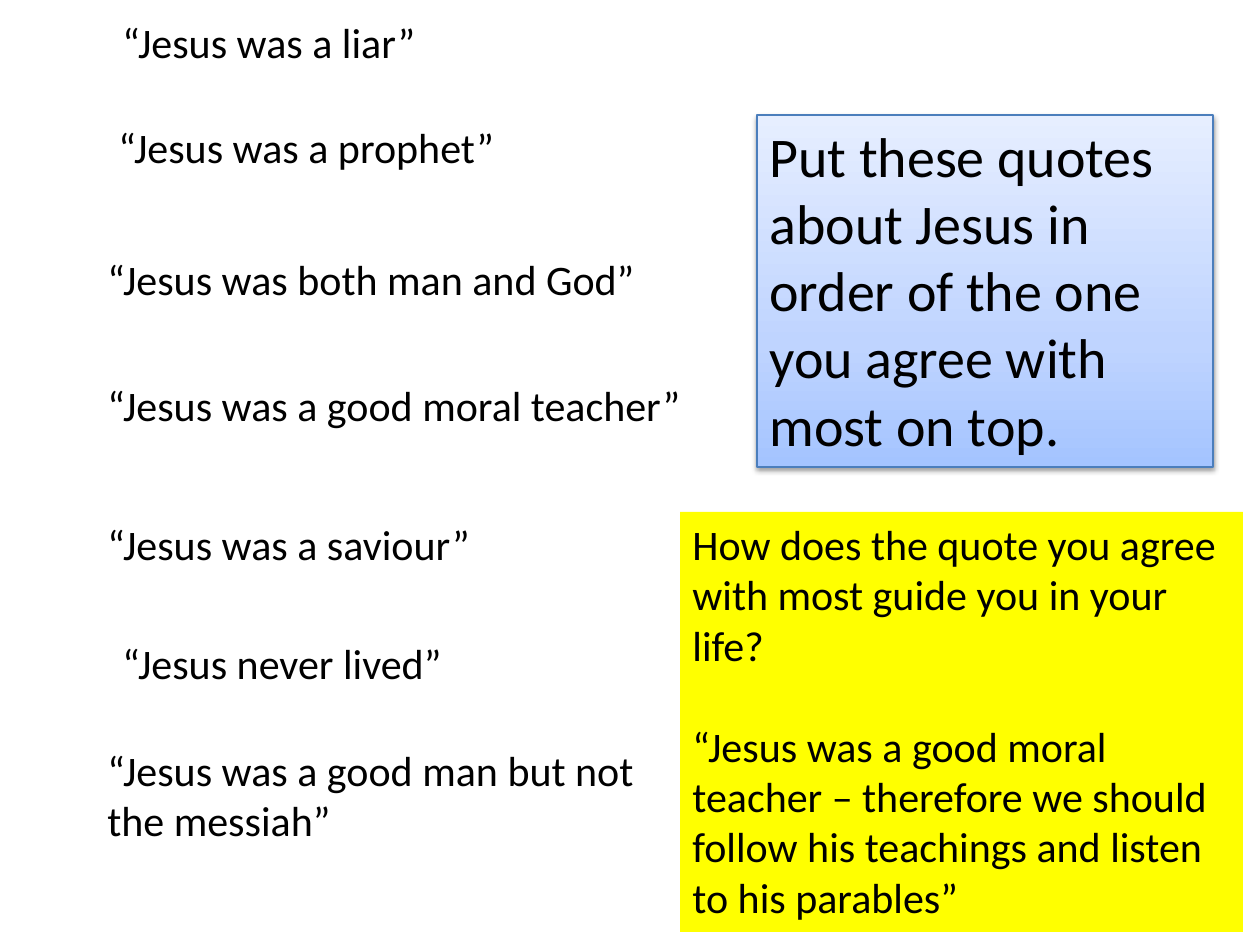
from copy import deepcopy

from lxml.etree import SubElement
from pptx import Presentation
from pptx.dml.color import RGBColor
from pptx.enum.shapes import MSO_SHAPE
from pptx.enum.text import MSO_ANCHOR, MSO_AUTO_SIZE, PP_ALIGN
from pptx.oxml.ns import qn
from pptx.util import Pt

PX = 914400 / 126
FONT = "Calibri"
BLACK = RGBColor(0x00, 0x00, 0x00)
YELLOW = RGBColor(0xFF, 0xFF, 0x00)
BLUE_LINE = RGBColor(0x4B, 0x7E, 0xBC)
BLUE_STOPS = [
    (0, RGBColor(0xA4, 0xC4, 0xFF)),
    (0.35, RGBColor(0xBF, 0xD4, 0xFF)),
    (1, RGBColor(0xE6, 0xEE, 0xFF)),
]

QUOTE_WIDTH = 605
QUOTES = [  # left, top, height, words
    (110, 10, 58, "“Jesus was a liar”"),
    (106, 115, 58, "“Jesus was a prophet”"),
    (95, 247, 58, "“Jesus was both man and God”"),
    (95, 373, 58, "“Jesus was a good moral teacher”"),
    (95, 512, 58, "“Jesus was a saviour”"),
    (110, 631, 58, "“Jesus never lived”"),
    (95, 738, 115, "“Jesus was a good man but not the messiah”"),
]
TASK = "Put these quotes about Jesus in order of the one you agree with most on top."
QUESTION = "How does the quote you agree with most guide you in your life?"
EXAMPLE = ("“Jesus was a good moral teacher – therefore we should follow "
           "his teachings and listen to his parables”")


def px(*lengths):
    return [round(length * PX) for length in lengths]


def write(shape, paragraphs, size, gap=0):
    """Fill the shape with left-aligned paragraphs, set gap points apart."""
    frame = shape.text_frame
    frame.word_wrap = True
    frame.auto_size = MSO_AUTO_SIZE.SHAPE_TO_FIT_TEXT
    frame.vertical_anchor = MSO_ANCHOR.TOP
    for index, words in enumerate(paragraphs):
        para = frame.add_paragraph() if index else frame.paragraphs[0]
        para.alignment = PP_ALIGN.LEFT
        if index:
            para.space_before = Pt(gap)
        span = para.add_run()
        span.text = words
        span.font.name = FONT
        span.font.size = Pt(size)
        span.font.color.rgb = BLACK


def add_quote(slide, left, top, height, words):
    box = slide.shapes.add_textbox(*px(left, top, QUOTE_WIDTH, height))
    write(box, [words], 24)


def add_panel(slide, left, top, width, height):
    panel = slide.shapes.add_shape(MSO_SHAPE.RECTANGLE, *px(left, top, width, height))
    panel.shadow.inherit = False
    return panel


def fill_gradient(shape, stops, angle):
    fill = shape.fill
    fill.gradient()
    fill.gradient_angle = angle
    stop_list = shape.element.spPr.find(".//" + qn("a:gsLst"))
    while len(stop_list) < len(stops):
        stop_list.append(deepcopy(stop_list[-1]))
    for stop, (position, color) in zip(fill.gradient_stops, stops):
        stop.position = position
        stop.color.rgb = color


def add_soft_shadow(shape):
    effects = shape.element.spPr.find(qn("a:effectLst"))
    shadow = SubElement(effects, qn("a:outerShdw"), blurRad="40000",
                        dist="20000", dir="5400000", rotWithShape="0")
    color = SubElement(shadow, qn("a:srgbClr"), val=str(BLACK))
    SubElement(color, qn("a:alpha"), val="38000")


def add_task(slide):
    panel = add_panel(slide, 757, 115, 456, 352)
    fill_gradient(panel, BLUE_STOPS, 90)
    panel.line.color.rgb = BLUE_LINE
    panel.line.width = Pt(0.75)
    add_soft_shadow(panel)
    write(panel, [TASK], 32)


def add_question(slide):
    panel = add_panel(slide, 680, 512, 563, 420)
    panel.fill.solid()
    panel.fill.fore_color.rgb = YELLOW
    panel.line.fill.background()
    write(panel, [QUESTION, EXAMPLE], 24, gap=29)


def main():
    deck = Presentation()
    deck.slide_width, deck.slide_height = px(1260, 945)
    slide = deck.slides.add_slide(deck.slide_layouts[6])
    for quote in QUOTES:
        add_quote(slide, *quote)
    add_task(slide)
    add_question(slide)
    deck.save("out.pptx")


if __name__ == "__main__":
    main()
